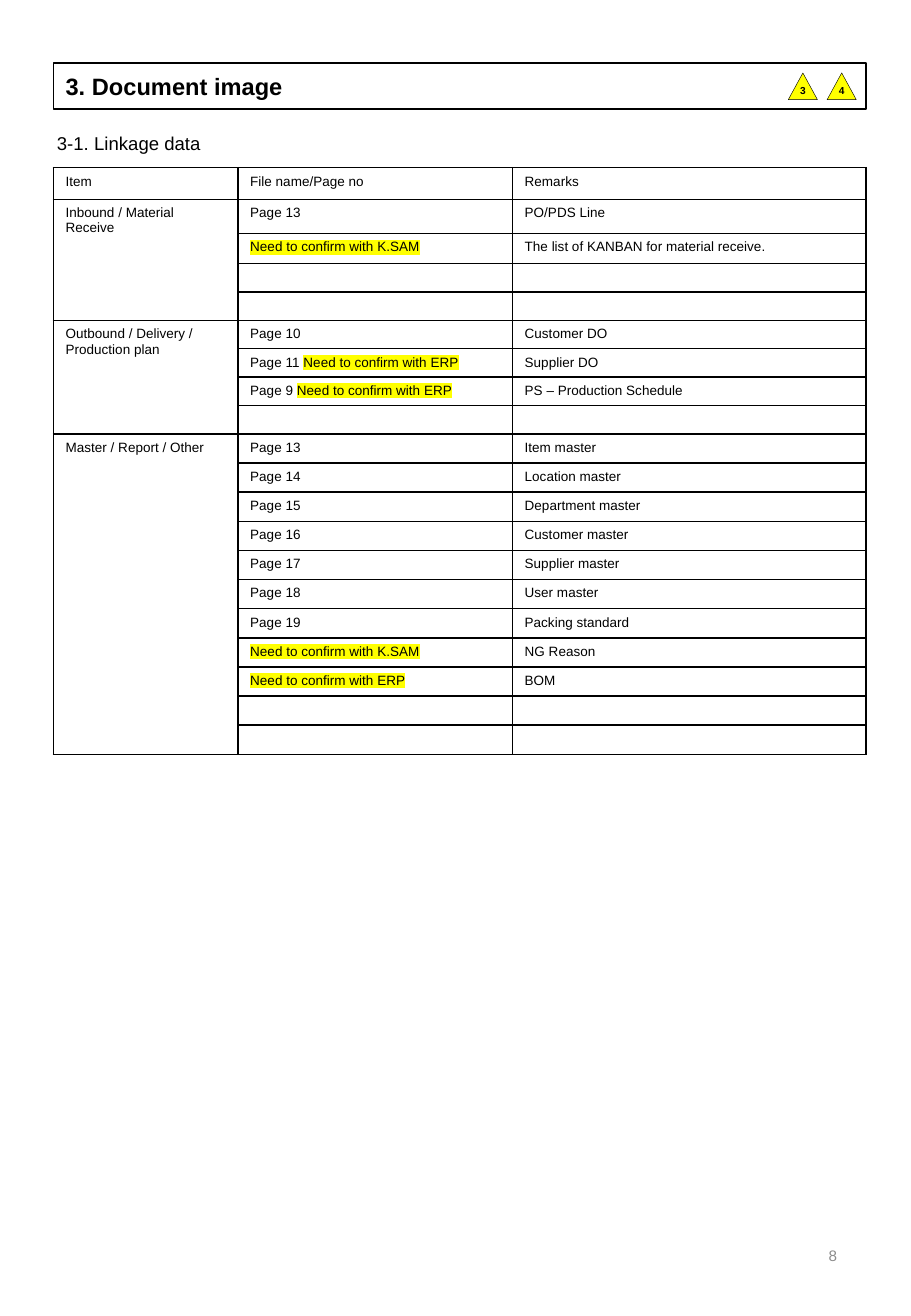
from lxml import etree
from pptx import Presentation
from pptx.dml.color import RGBColor
from pptx.enum import shapes, text
from pptx.oxml import ns
from pptx.util import Inches, Pt

# Content
TITLE = "3. Document image"
SUBTITLE = "3-1. Linkage data"
PAGE_NUMBER = "8"
REVISIONS = ["3", "4"]
HEADERS = ["Item", "File name/Page no", "Remarks"]
# Each group: item, then rows of (page, note to highlight, remark)
ASK_SAM = "Need to confirm with K.SAM"
ASK_ERP = "Need to confirm with ERP"
EMPTY = ("", "", "")
GROUPS = [
    ("Inbound / Material Receive", [
        ("Page 13", "", "PO/PDS Line"),
        ("", ASK_SAM, "The list of KANBAN for material receive."),
        EMPTY, EMPTY]),
    ("Outbound / Delivery / Production plan", [
        ("Page 10", "", "Customer DO"),
        ("Page 11 ", ASK_ERP, "Supplier DO"),
        ("Page 9 ", ASK_ERP, "PS – Production Schedule"),
        EMPTY]),
    ("Master / Report / Other", [
        ("Page 13", "", "Item master"),
        ("Page 14", "", "Location master"),
        ("Page 15", "", "Department master"),
        ("Page 16", "", "Customer master"),
        ("Page 17", "", "Supplier master"),
        ("Page 18", "", "User master"),
        ("Page 19", "", "Packing standard"),
        ("", ASK_SAM, "NG Reason"),
        ("", ASK_ERP, "BOM"),
        EMPTY, EMPTY]),
]

# Style and layout
FONT = "Arial"
BLACK = RGBColor(0x00, 0x00, 0x00)
GRAY = RGBColor(0x8C, 0x8C, 0x8C)
YELLOW = RGBColor(0xFF, 0xFF, 0x00)
LEFT, WIDTH = 0.44, 6.69
COLUMN_WIDTHS = [1.52, 2.26, 2.91]
ROW_HEIGHTS = [0.26, 0.28, 0.25] + [0.23] * 6 + [0.24] * 11


def place(shape, left, top, width, height):
    shape.left, shape.top = Inches(left), Inches(top)
    shape.width, shape.height = Inches(width), Inches(height)


def format_run(run, size, color=BLACK, bold=False, highlight=None):
    run.font.size, run.font.bold = Pt(size), bold
    run.font.color.rgb = color
    if highlight is not None:
        mark = etree.SubElement(run.font._element, ns.qn("a:highlight"))
        etree.SubElement(mark, ns.qn("a:srgbClr"), val=str(highlight))
    run.font.name = FONT


def write(shape, words, size, align=text.PP_ALIGN.LEFT, color=BLACK, bold=False):
    shape.text_frame.text = words
    paragraph = shape.text_frame.paragraphs[0]
    paragraph.alignment = align
    format_run(paragraph.runs[0], size, color, bold)


def add_label(slide, box, words, size, **style):
    label = slide.shapes.add_textbox(*map(Inches, box))
    label.text_frame.word_wrap = True
    write(label, words, size, **style)
    return label


def fill_cell(cell, words, note=""):
    paragraph = cell.text_frame.paragraphs[0]
    for part, highlight in ((words, None), (note, YELLOW)):
        if part:
            run = paragraph.add_run()
            run.text = part
            format_run(run, 8, highlight=highlight)
    # Keeps empty rows as low as the written ones
    etree.SubElement(paragraph._p, ns.qn("a:endParaRPr"), sz="800")


def add_borders(cell):
    properties = cell._tc.get_or_add_tcPr()
    for side in ("lnL", "lnR", "lnT", "lnB"):
        line = etree.SubElement(properties, ns.qn("a:" + side), w=str(Pt(1)))
        fill = etree.SubElement(line, ns.qn("a:solidFill"))
        etree.SubElement(fill, ns.qn("a:srgbClr"), val=str(BLACK))
    cell.fill.background()


def add_linkage_table(slide):
    frame = slide.shapes.add_table(
        len(ROW_HEIGHTS), len(COLUMN_WIDTHS), Inches(LEFT), Inches(1.38),
        Inches(WIDTH), Inches(sum(ROW_HEIGHTS)))
    table = frame.table
    table.first_row = table.horz_banding = False
    for column, width in zip(table.columns, COLUMN_WIDTHS):
        column.width = Inches(width)
    for row, height in zip(table.rows, ROW_HEIGHTS):
        row.height = Inches(height)
    for cell in table.iter_cells():
        add_borders(cell)

    for column, header in enumerate(HEADERS):
        fill_cell(table.cell(0, column), header)
    first = 1
    for item, rows in GROUPS:
        last = first + len(rows) - 1
        table.cell(first, 0).merge(table.cell(last, 0))
        fill_cell(table.cell(first, 0), item)
        for row, (page, note, remark) in enumerate(rows, first):
            fill_cell(table.cell(row, 1), page, note)
            fill_cell(table.cell(row, 2), remark)
        first = last + 1


def add_revision_mark(slide, index, number):
    triangle = slide.shapes.add_shape(
        shapes.MSO_SHAPE.ISOSCELES_TRIANGLE, Inches(6.49 + 0.32 * index),
        Inches(0.6), Inches(0.24), Inches(0.22))
    triangle.shadow.inherit = False
    triangle.fill.solid()
    triangle.fill.fore_color.rgb = YELLOW
    triangle.line.color.rgb = BLACK
    triangle.line.width = Pt(0.25)
    frame = triangle.text_frame
    frame.word_wrap = False
    frame.vertical_anchor = text.MSO_ANCHOR.MIDDLE
    frame.margin_top, frame.margin_bottom = 0, Inches(0.05)
    write(triangle, number, 6, text.PP_ALIGN.CENTER, bold=True)


def main():
    presentation = Presentation()
    presentation.slide_width = Inches(7.5)
    presentation.slide_height = Inches(10.83)
    slide = presentation.slides.add_slide(presentation.slide_layouts[5])

    # Framed title
    title = slide.shapes.title
    place(title, LEFT, 0.52, WIDTH, 0.38)
    title.line.color.rgb = BLACK
    title.line.width = Pt(1)
    title.text_frame.auto_size = text.MSO_AUTO_SIZE.NONE
    title.text_frame.vertical_anchor = text.MSO_ANCHOR.MIDDLE
    write(title, TITLE, 14, bold=True)

    # Subtitle, table and revision marks
    add_label(slide, (0.37, 1.04, 4.59, 0.29), SUBTITLE, 11)
    add_linkage_table(slide)
    for index, number in enumerate(REVISIONS):
        add_revision_mark(slide, index, number)

    # Page number
    page = add_label(slide, (5.3, 10.04, 1.69, 0.58), PAGE_NUMBER, 9,
                     align=text.PP_ALIGN.RIGHT, color=GRAY)
    page.text_frame.vertical_anchor = text.MSO_ANCHOR.MIDDLE

    presentation.save("out.pptx")


if __name__ == "__main__":
    main()
